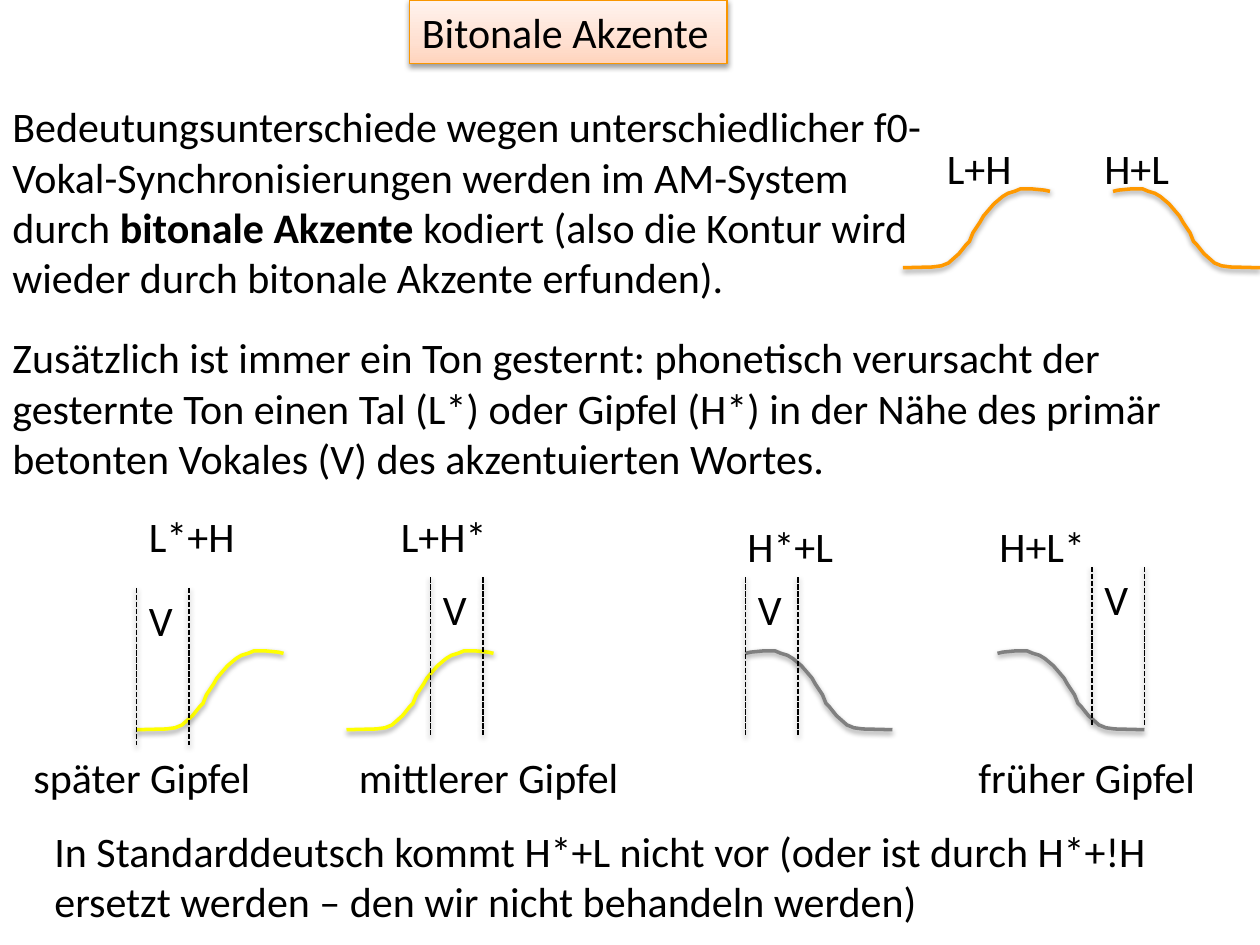
from copy import deepcopy
from lxml import etree
from pptx import Presentation
from pptx.dml.color import RGBColor
from pptx.enum.dml import MSO_LINE
from pptx.enum.shapes import MSO_CONNECTOR, MSO_SHAPE
from pptx.enum.text import MSO_ANCHOR, PP_ALIGN
from pptx.oxml.ns import qn
from pptx.util import Pt

RECT, LINE = MSO_SHAPE.RECTANGLE, MSO_CONNECTOR.STRAIGHT
DASH, LEFT, TOP = MSO_LINE.SQUARE_DOT, PP_ALIGN.LEFT, MSO_ANCHOR.TOP

THEME = {
    "ink": "000000", "rise": "FFFF00", "fall": "808080", "tone": "FF9900",
    "edge": "F99600", "grad": [(0, "FFD4BD"), (0.35, "FFE0D1"), (1, "FFF3EE")],
    "font": {"name": "Calibri", "size": Pt(24)},
    "frame": {"word_wrap": True, "vertical_anchor": TOP},
    "curve": 2, "mark": 1, "rim": 0.75,
}

# Content: texts as (left, top, width, height, runs); a run is (text, bold)
TITLE = (234, 0, 181.5, 36.5, [("Bitonale Akzente", False)])
TEXTS = [
    (0, 54, 534, 124, [
        ("Bedeutungsunterschiede wegen unterschiedlicher f0-Vokal-Synchronisierungen "
         "werden im AM-System durch ", False),
        ("bitonale Akzente ", True),
        ("kodiert (also die Kontur wird wieder durch bitonale Akzente erfunden).", False)]),
    (0, 186, 690, 94.5, [
        ("Zusätzlich ist immer ein Ton gesternt: phonetisch verursacht der gesternte "
         "Ton einen Tal (L*) oder Gipfel (H*) in der Nähe des primär betonten "
         "Vokales (V) des akzentuierten Wortes.", False)]),
    (12, 426, 150, 36, [("später Gipfel", False)]),
    (198, 426, 168, 36, [("mittlerer Gipfel", False)]),
    (552, 426, 168, 36, [("früher Gipfel", False)]),
    (24, 468, 648, 65.5, [
        ("In Standarddeutsch kommt H*+L nicht vor (oder ist durch H*+!H ersetzt "
         "werden – den wir nicht behandeln werden)", False)]),
]

# Accents: name, name left and top, curve left and top, falling, colour, vowel left and top
ACCENTS = [
    ("L+H", (534, 78), (516, 108), False, "tone", None),
    ("H+L", (624, 78), (636, 108), True, "tone", None),
    ("L*+H", (78, 288), (78, 372), False, "rise", (78, 336)),
    ("L+H*", (222, 288), (198, 372), False, "rise", (246, 330)),
    ("H*+L", (420, 294), (426, 372), True, "fall", (426, 330)),
    ("H+L*", (564, 294), (570, 372), True, "fall", (624, 324)),
]

# Rising pitch contour, from its top left corner
SPAN = 84
RISE = [(0, 45), (17, 44.6), (22, 43.9), (26, 42.3), (32, 37), (34, 34.5), (36, 32),
        (38, 30), (40, 25), (42, 22), (44, 19), (46, 15.5), (52, 8.5), (57, 4.3),
        (60, 2.5), (64, 1.3), (67, 0), (74, 0), (81, 0.7), (84, 1.4)]
VOWEL, TALL = 30, 90


def rgb(key):
    return RGBColor.from_string(THEME.get(key, key))


def apply(obj, vals):
    for key, val in vals.items():
        setattr(obj, key, val)


def stroke(shape, key, width, dash=None):
    """Set the line, then add the soft shadow below it."""
    shape.line.color.rgb = rgb(key)
    apply(shape.line, {"width": Pt(width), "dash_style": dash})
    effect = etree.SubElement(shape._element.spPr, qn("a:effectLst"))
    shade = etree.SubElement(effect, qn("a:outerShdw"), blurRad="40000",
                             dist="20000", dir="5400000", rotWithShape="0")
    tint = etree.SubElement(shade, qn("a:srgbClr"), val=THEME["ink"])
    etree.SubElement(tint, qn("a:alpha"), val="38000")


def write(shape, runs, wrap=True):
    frame = shape.text_frame
    apply(frame, THEME["frame"] | {"word_wrap": wrap})
    para = frame.paragraphs[0]
    para.alignment = LEFT
    for text, bold in runs:
        run = para.add_run()
        run.text = text
        apply(run.font, THEME["font"] | {"bold": bold})
        run.font.color.rgb = rgb("ink")


def add_text(shapes, left, top, width, height, runs):
    write(shapes.add_textbox(Pt(left), Pt(top), Pt(width), Pt(height)), runs)


def add_title(shapes):
    *box, runs = TITLE
    shape = shapes.add_shape(RECT, *map(Pt, box))
    fill = shape.fill
    fill.gradient()
    fill.gradient_angle = 90
    first = fill._fill._gradFill.gsLst[0]
    first.addnext(deepcopy(first))
    for stop, (pos, key) in zip(fill.gradient_stops, THEME["grad"]):
        stop.position = pos
        stop.color.rgb = rgb(key)
    stroke(shape, "edge", THEME["rim"])
    write(shape, runs, wrap=False)


def add_curve(shapes, left, top, falls, key):
    pts = [(Pt(left + (SPAN - x if falls else x)), Pt(top + y)) for x, y in RISE]
    path = shapes.build_freeform(*pts[0])
    path.add_line_segments(pts[1:], close=False)
    shape = path.convert_to_shape()
    shape.fill.background()
    stroke(shape, key, THEME["curve"])


def add_vowel(shapes, left, top):
    for x in (left, left + VOWEL):
        mark = shapes.add_connector(LINE, Pt(x), Pt(top), Pt(x), Pt(top + TALL))
        stroke(mark, "ink", THEME["mark"], DASH)
    add_text(shapes, left, top, 42, 36, [("V", False)])


def main():
    deck = Presentation()
    apply(deck, {"slide_width": Pt(720), "slide_height": Pt(540)})
    shapes = deck.slides.add_slide(deck.slide_layouts[6]).shapes

    # Title and prose
    add_title(shapes)
    for item in TEXTS:
        add_text(shapes, *item)

    # Accent contours with their vowel spans
    for name, spot, start, falls, key, vowel in ACCENTS:
        add_curve(shapes, *start, falls, key)
        if vowel:
            add_vowel(shapes, *vowel)
        add_text(shapes, *spot, 78, 36, [(name, False)])

    deck.save("out.pptx")


if __name__ == "__main__":
    main()
